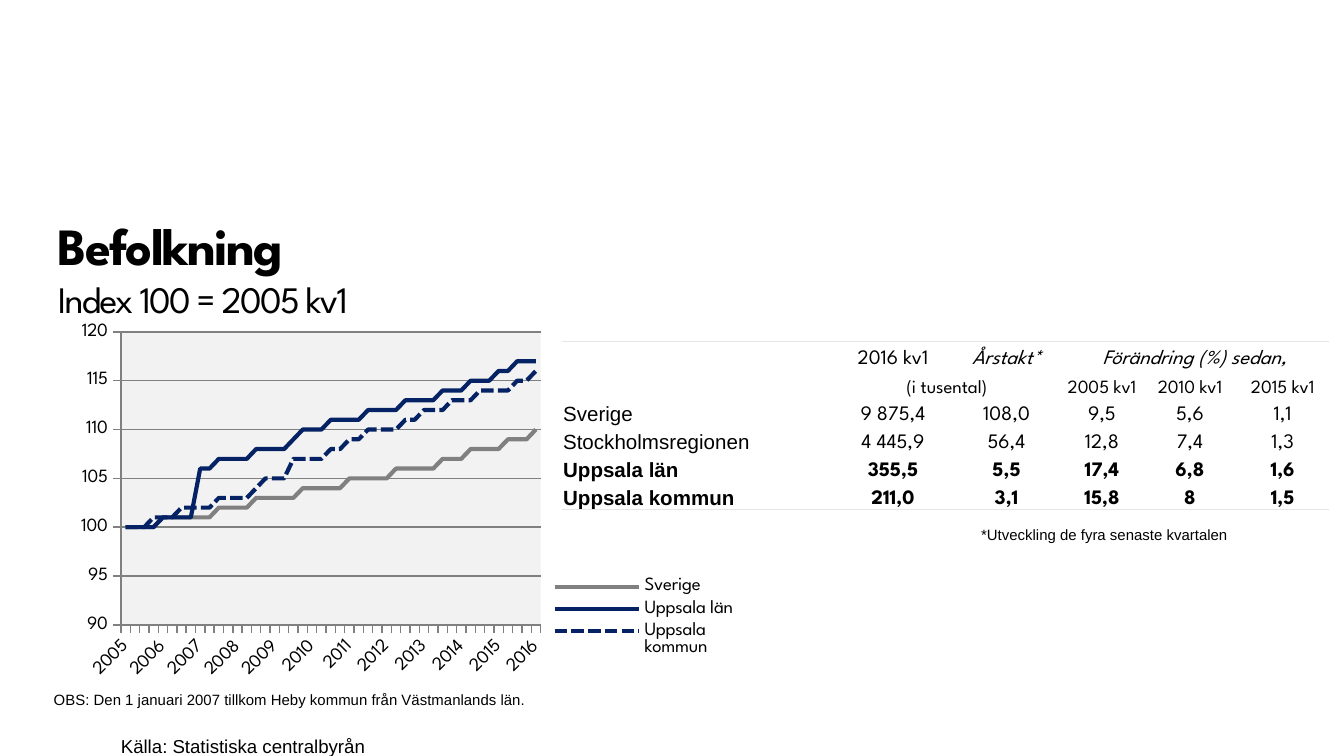
from lxml import etree
from pptx import Presentation
from pptx.chart.data import CategoryChartData
from pptx.dml.color import RGBColor
from pptx.enum.chart import XL_CHART_TYPE, XL_LEGEND_POSITION, XL_TICK_MARK
from pptx.enum.dml import MSO_LINE
from pptx.enum.text import MSO_ANCHOR, MSO_AUTO_SIZE, PP_ALIGN
from pptx.oxml import parse_xml
from pptx.oxml.ns import nsdecls, qn
from pptx.util import Inches, Pt

WIDTH = 10
HEIGHT = WIDTH * 9 / 16
LINE_CHART, LEGEND_RIGHT = XL_CHART_TYPE.LINE, XL_LEGEND_POSITION.RIGHT
TICK_OUT, DASHED = XL_TICK_MARK.OUTSIDE, MSO_LINE.SQUARE_DOT
BOTTOM, CENTER, LEFT = MSO_ANCHOR.BOTTOM, PP_ALIGN.CENTER, PP_ALIGN.LEFT
NO_FIT = MSO_AUTO_SIZE.NONE
HEAD_FONT, BODY_FONT = "League Spartan", "Arial"
NO_STYLE = "{2D5ABB26-0587-4C30-8999-92F81FD0307C}"
COLORS = {"text": "000000", "rule": "E6E6E6", "plot": "F2F2F2",
          "gray": "808080", "navy": "052364"}

COLUMNS = [2.02, 0.89, 0.8, 0.62, 0.69, 0.69]
ROW_HEIGHT = 1.25 / 6
ROWS = [
    ["", "2016 kv1", "Årstakt*", "Förändring (%) sedan,", "", ""],
    ["", "(i tusental)", "", "2005 kv1", "2010 kv1", "2015 kv1"],
    ["Sverige", "9 875,4", "108,0", "9,5", "5,6", "1,1"],
    ["Stockholmsregionen", "4 445,9", "56,4", "12,8", "7,4", "1,3"],
    ["Uppsala län", "355,5", "5,5", "17,4", "6,8", "1,6"],
    ["Uppsala kommun", "211,0", "3,1", "15,8", "8", "1,5"],
]
MERGES = [((0, 3), (0, 5)), ((1, 1), (1, 2))]

QUARTERS = [str(2005 + i // 4) if i % 4 == 0 else "" for i in range(45)]
SERIES = [
    ("Sverige", "gray", None,
     [100] * 4 + [101] * 6 + [102] * 4 + [103] * 5 + [104] * 5 + [105] * 5
     + [106] * 5 + [107] * 3 + [108] * 4 + [109] * 3 + [110]),
    ("Uppsala län", "navy", None,
     [100] * 4 + [101] * 4 + [106] * 2 + [107] * 4 + [108] * 4 + [109]
     + [110] * 3 + [111] * 4 + [112] * 4 + [113] * 4 + [114] * 3
     + [115] * 3 + [116] * 2 + [117] * 3),
    ("Uppsala kommun", "navy", DASHED,
     [100] * 3 + [101] * 3 + [102] * 4 + [103] * 4 + [104] + [105] * 3
     + [107] * 4 + [108] * 2 + [109] * 2 + [110] * 4 + [111] * 2
     + [112] * 3 + [113] * 3 + [114] * 4 + [115] * 2 + [116]),
]
NOTES = [
    ("Källa: Statistiska centralbyrån", 0.9, 5.3, 0.42, 10),
    ("*Utveckling de fyra senaste kvartalen", 7.3, 3.71, 1, 8),
    ("OBS: Den 1 januari 2007 tillkom Heby kommun från Västmanlands län.",
     0.4, 4.94, 1, 8),
]


def color(name):
    """Return a named colour."""
    return RGBColor.from_string(COLORS[name])


def style(font, size, name=HEAD_FONT, **formats):
    """Apply size, typeface and other values to a font."""
    for key, value in {"size": Pt(size), "name": name, **formats}.items():
        setattr(font, key, value)
    font.color.rgb = color("text")


def set_frame(frame, **formats):
    """Remove the insets of a text frame and set its other values."""
    for side in ("left", "right", "top", "bottom"):
        setattr(frame, f"margin_{side}", 0)
    for key, value in formats.items():
        setattr(frame, key, value)


def add_title(page):
    """Fill the title placeholder with heading and subheading."""
    title = page.shapes.title
    title.left, title.top = Inches(0.43), Inches(1.59)
    title.width, title.height = Inches(6.21), Inches(0.8)
    set_frame(title.text_frame, auto_size=NO_FIT, word_wrap=True,
              vertical_anchor=BOTTOM)
    para = title.text_frame.paragraphs[0]
    para.alignment = LEFT
    for text, size, bold in (("Befolkning", 28, True),
                             ("Index 100 = 2005 kv1", 20, False)):
        if para.runs:
            para.add_line_break()
        span = para.add_run()
        span.text = text
        style(span.font, size, bold=bold)
        span.font._element.set("spc", "-90")


def add_note(page, text, left, top, height, size):
    """Add one unwrapped line of small text."""
    box = page.shapes.add_textbox(Inches(left), Inches(top), Inches(1), Inches(height))
    set_frame(box.text_frame, word_wrap=False, auto_size=NO_FIT)
    para = box.text_frame.paragraphs[0]
    para.line_spacing = Pt(24)
    span = para.add_run()
    span.text = text
    style(span.font, size, BODY_FONT)


def add_rule(cell, side):
    """Draw a thin rule along the top (T) or bottom (B) of a cell."""
    cell._tc.get_or_add_tcPr().insert(0, parse_xml(
        f'<a:ln{side} {nsdecls("a")} w="12700"><a:solidFill>'
        f'<a:srgbClr val="{COLORS["rule"]}"/></a:solidFill></a:ln{side}>'))


def fill_cell(cell, text, row, column):
    """Write and format one table cell."""
    cell.fill.background()
    cell.vertical_anchor = BOTTOM
    cell.margin_left = cell.margin_right = cell.margin_top = Inches(0.01)
    cell.margin_bottom = 0
    para = cell.text_frame.paragraphs[0]
    para.alignment = CENTER if column else LEFT
    if text:
        span = para.add_run()
        span.text = text
        style(span.font, 10 if row == 1 else 11,
              HEAD_FONT if column else BODY_FONT,
              bold=row > 3, italic=row == 0 and column > 1)
    else:
        etree.SubElement(para._p, qn("a:endParaRPr"), sz="1000")
    if row == 0:
        add_rule(cell, "T")
    if row == len(ROWS) - 1:
        add_rule(cell, "B")


def add_figures(page):
    """Add the population table."""
    table = page.shapes.add_table(
        len(ROWS), len(COLUMNS), Inches(4.18), Inches(2.54),
        Inches(sum(COLUMNS)), Inches(ROW_HEIGHT * len(ROWS))).table
    table.first_row = table.horz_banding = False
    table._tbl.tblPr.find(qn("a:tableStyleId")).text = NO_STYLE
    for column, width in zip(table.columns, COLUMNS):
        column.width = Inches(width)
    for r, texts in enumerate(ROWS):
        table.rows[r].height = Inches(ROW_HEIGHT)
        for c, text in enumerate(texts):
            fill_cell(table.cell(r, c), text, r, c)
    for first, last in MERGES:
        table.cell(*first).merge(table.cell(*last))


def place(part, position, x, y, w, h, inner=False):
    """Give a chart part a manual layout in shares of the chart's size."""
    for old in part.findall(qn("c:layout")):
        part.remove(old)
    target = '<c:layoutTarget val="inner"/>' if inner else ""
    values = "".join(f'<c:{key} val="{value}"/>' for key, value in
                     (("xMode", "edge"), ("yMode", "edge"),
                      ("x", x), ("y", y), ("w", w), ("h", h)))
    part.insert(position, parse_xml(
        f'<c:layout {nsdecls("c")}><c:manualLayout>{target}{values}'
        '</c:manualLayout></c:layout>'))


def format_axes(chart):
    """Set scale, ticks, gridlines and label rotation."""
    values, years = chart.value_axis, chart.category_axis
    for key, value in {"minimum_scale": 90, "maximum_scale": 120, "major_unit": 5,
                       "has_major_gridlines": True}.items():
        setattr(values, key, value)
    values.tick_labels.number_format = "#,##0"
    values.tick_labels.number_format_is_linked = False
    for axis in (values, years):
        axis.major_tick_mark = TICK_OUT
        style(axis.tick_labels.font, 10)
    for line in (values.format.line, years.format.line, values.major_gridlines.format.line):
        line.color.rgb = color("gray")
        line.width = Pt(0.75)
    years._element.find(qn("c:txPr")).find(qn("a:bodyPr")).set("rot", "-2700000")
    years._element.find(qn("c:noMultiLvlLbl")).addprevious(
        parse_xml(f'<c:tickLblSkip {nsdecls("c")} val="1"/>'))


def add_index_chart(page):
    """Add the line chart of the population index."""
    data = CategoryChartData(number_format="#,##0")
    data.categories = QUARTERS
    for name, _, _, numbers in SERIES:
        data.add_series(name, numbers)
    chart = page.shapes.add_chart(LINE_CHART, Inches(0.49), Inches(2.36),
                                  Inches(5.12), Inches(2.76), data).chart
    style(chart.font, 10)
    chart.has_title = False
    chart.has_legend = True
    chart.legend.position = LEGEND_RIGHT
    chart.legend.include_in_layout = False
    style(chart.legend.font, 10)
    place(chart.legend._element, 1, 0.7, 0.69, 0.28, 0.24)
    format_axes(chart)
    chart.plots[0].vary_by_categories = False
    for series, (_, tone, dash, _) in zip(chart.plots[0].series, SERIES):
        series.smooth = False
        line = series.format.line
        line.color.rgb = color(tone)
        line.width = Pt(2.25)
        line.dash_style = dash
    area = chart._chartSpace.chart.plotArea
    place(area, 0, 0.08, 0.04, 0.61, 0.79, inner=True)
    area.append(parse_xml(
        f'<c:spPr {nsdecls("c", "a")}><a:solidFill>'
        f'<a:srgbClr val="{COLORS["plot"]}"/></a:solidFill></c:spPr>'))


def main():
    """Build and save the slide."""
    deck = Presentation()
    deck.slide_width, deck.slide_height = Inches(WIDTH), Inches(HEIGHT)
    page = deck.slides.add_slide(deck.slide_layouts[5])
    add_title(page)
    add_figures(page)
    for note in NOTES:
        add_note(page, *note)
    add_index_chart(page)
    deck.save("out.pptx")


if __name__ == "__main__":
    main()
